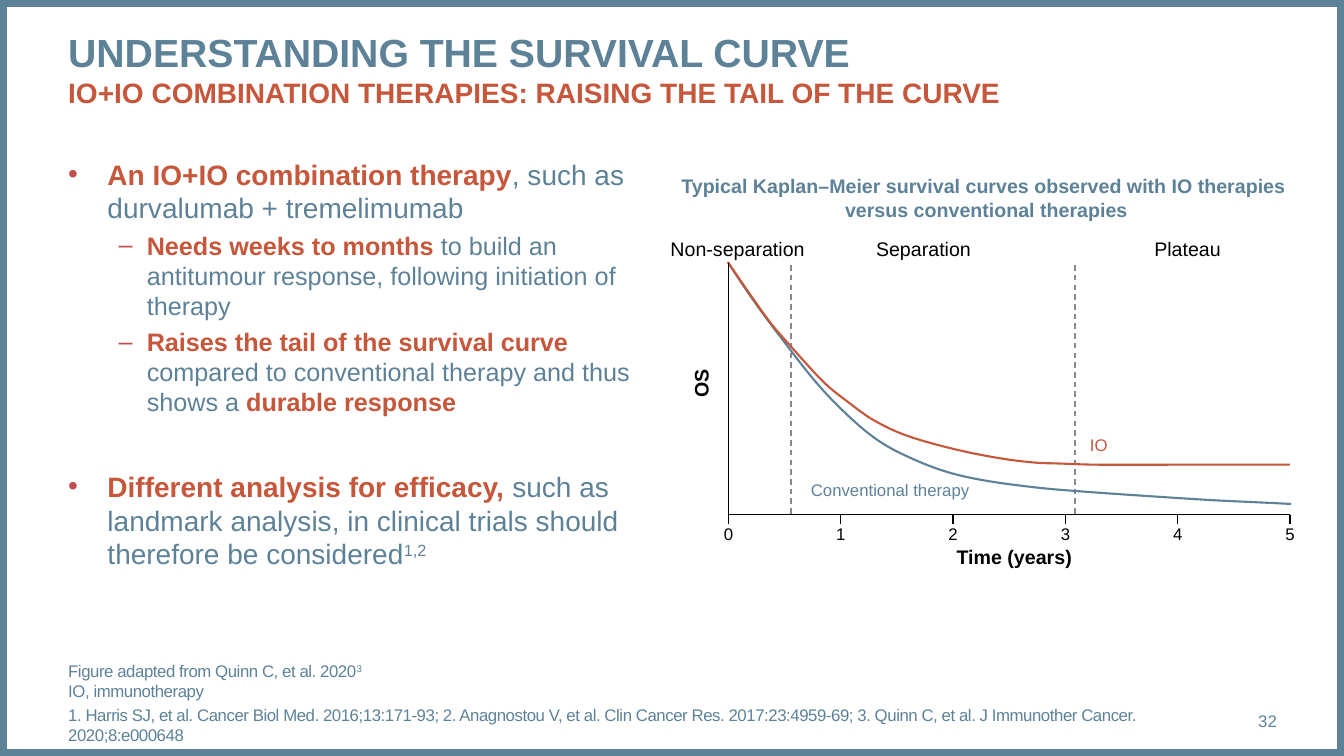
from lxml import etree
from pptx import Presentation
from pptx.dml.color import RGBColor
from pptx.enum.dml import MSO_LINE
from pptx.enum.shapes import MSO_CONNECTOR, MSO_SHAPE
from pptx.enum.text import MSO_ANCHOR, PP_ALIGN
from pptx.oxml.ns import qn
from pptx.util import Cm, Pt

LEFT, CENTER, RIGHT = PP_ALIGN.LEFT, PP_ALIGN.CENTER, PP_ALIGN.RIGHT
TOP, MIDDLE, BOTTOM = MSO_ANCHOR.TOP, MSO_ANCHOR.MIDDLE, MSO_ANCHOR.BOTTOM
STRAIGHT, RECTANGLE, DASH = MSO_CONNECTOR.STRAIGHT, MSO_SHAPE.RECTANGLE, MSO_LINE.DASH

FONT = "Arial"
COLORS = {"blue": "5D8298", "orange": "C6573B", "bullet": "C0504D",
          "black": "000000", "gray": "8B878B"}

# A span is (text, format); a paragraph is (spans, format). Lengths are in cm.
STRONG = {"color": "orange", "bold": True}
RAISED = {"raised": True}
TITLE = [([
    ("UNDERSTANDING THE SURVIVAL CURVE", {"size": 28, "bold": True}),
    ("\n", {}),
    ("IO+IO COMBINATION THERAPIES: RAISING THE TAIL OF THE CURVE", STRONG),
], {})]

MAIN = {"size": 20, "bullet": "•", "margin": 0.99, "hang": 0.99}
SUB = {"size": 18, "bullet": "–", "margin": 1.98, "hang": 0.71, "before": 4}
BODY = [
    ([("An IO+IO combination therapy", STRONG),
      (", such as durvalumab + tremelimumab", {})], MAIN),
    ([("Needs weeks to months", STRONG),
      (" to build an antitumour response, following initiation of therapy", {})], SUB),
    ([("Raises the tail of the survival curve ", STRONG),
      ("compared to conventional therapy and thus shows a ", {}),
      ("durable response", STRONG)], SUB),
    ([("Different analysis for efficacy,", STRONG),
      (" such as landmark analysis, in clinical trials should therefore be considered", {}),
      ("1,2", RAISED)], {**MAIN, "before": 37.5}),
]

NOTES = [
    ([("Figure adapted from Quinn C, et al. 2020", {}), ("3", RAISED), ("\n", {}),
      ("IO, immunotherapy", {})], {}),
    ([("1. Harris SJ, et al. Cancer Biol Med.\u00a02016;13:171-93; 2. Anagnostou V, et al. "
       "Clin Cancer Res. 2017:23:4959-69; 3. Quinn C, et al. J Immunother Cancer. "
       "2020;8:e000648", {})], {"before": 3}),
]

CHART_TITLE = ["Typical Kaplan–Meier survival curves observed with IO therapies ",
               "versus conventional therapies"]

# text, (left, top, width, height), format
CHART_LABELS = [
    ("Non-separation", (16.89, 5.97, 3.4, 0.61), {"size": 14}),
    ("Separation", (22.07, 5.97, 2.41, 0.61), {"size": 14}),
    ("Plateau", (29.09, 5.97, 1.68, 0.61), {"size": 14}),
    ("IO", (27.46, 10.95, 0.46, 0.51), {"size": 12, "color": "orange"}),
    ("Conventional therapy", (20.43, 12.09, 4.01, 0.51), {"size": 12, "color": "blue"}),
    ("OS", (17.22, 9.35, 0.9, 0.61), {"size": 14, "bold": True, "rotation": 270}),
    ("Time (years)", (24.1, 13.72, 2.92, 0.61), {"size": 14, "bold": True}),
]

AXIS_X, AXIS_TOP, AXIS_Y = 18.36, 6.63, 12.97
YEAR_WIDTH, YEARS = 2.83, 5
PHASE_LIMITS = [19.93, 27.09]

CURVES = {
    "blue": [(18.36, 6.63), (18.64, 7.06), (19.13, 7.77), (19.76, 8.61), (20.52, 9.58),
             (21.18, 10.29), (21.95, 10.97), (22.61, 11.38), (23.7, 11.84),
             (24.71, 12.09), (26.16, 12.29), (27.46, 12.4), (28.91, 12.5),
             (30.48, 12.6), (31.93, 12.67), (32.54, 12.7)],
    "orange": [(18.34, 6.6), (18.87, 7.37), (19.43, 8.15), (19.94, 8.74), (20.78, 9.65),
               (21.41, 10.16), (22.02, 10.59), (22.83, 10.97), (24.1, 11.33),
               (25.27, 11.56), (26.11, 11.66), (26.67, 11.68), (27.61, 11.71),
               (29.87, 11.71), (32.51, 11.71)],
}


def rgb(name):
    return RGBColor.from_string(COLORS[name])


def add_bullet(para, char, margin, hang):
    props = para._p.get_or_add_pPr()
    props.set("marL", str(Cm(margin)))
    props.set("indent", str(-Cm(hang)))
    color = etree.SubElement(props, qn("a:buClr"))
    etree.SubElement(color, qn("a:srgbClr"), val=COLORS["bullet"])
    etree.SubElement(props, qn("a:buFont"), typeface=FONT)
    etree.SubElement(props, qn("a:buChar"), char=char)


def add_span(para, text, size=12, color="blue", bold=False, raised=False, spacing=0):
    if text == "\n":
        para.add_line_break()
        return
    span = para.add_run()
    span.text = text
    font = span.font
    font.name, font.size, font.bold = FONT, Pt(size), bold
    font.color.rgb = rgb(color)
    props = font._element
    if raised:
        props.set("baseline", "30000")
    if spacing:
        props.set("spc", str(round(spacing * 100)))


def add_text(page, paragraphs, area, align=LEFT, anchor=TOP, wrap=True, rotation=0, **style):
    """Add a text box; style is the span format unless a paragraph or span overrides it."""
    box = page.shapes.add_textbox(*map(Cm, area))
    box.rotation = rotation
    frame = box.text_frame
    frame.word_wrap, frame.vertical_anchor = wrap, anchor
    frame.margin_left = frame.margin_right = frame.margin_top = frame.margin_bottom = 0
    for index, (spans, layout) in enumerate(paragraphs):
        para = frame.add_paragraph() if index else frame.paragraphs[0]
        para.alignment = align
        para.space_before = Pt(layout.get("before", 0))
        if "bullet" in layout:
            add_bullet(para, layout["bullet"], layout["margin"], layout["hang"])
        base = {**style, "size": layout.get("size", style.get("size", 12))}
        for text, override in spans:
            add_span(para, text, **{**base, **override})


def add_line(page, start, end, color="black", dash=None):
    line = page.shapes.add_connector(STRAIGHT, *map(Cm, start + end))
    line.line.color.rgb = rgb(color)
    line.line.width = Pt(1)
    line.line.dash_style = dash
    etree.SubElement(line._element.spPr, qn("a:effectLst"))


def bend_segments(curve):
    """Turn the straight segments of a freeform into cubic curves with smooth joints."""
    points = list(curve._element.iter(qn("a:pt")))
    knots = [(int(point.get("x")), int(point.get("y"))) for point in points]
    slopes = []
    for index in range(len(knots)):
        x0, y0 = knots[max(index - 1, 0)]
        x1, y1 = knots[min(index + 1, len(knots) - 1)]
        slopes.append((y1 - y0) / (x1 - x0))
    for index, point in enumerate(points[1:]):
        (x0, y0), (x1, y1) = knots[index:index + 2]
        third = (x1 - x0) / 3
        controls = [(x0 + third, y0 + third * slopes[index]),
                    (x1 - third, y1 - third * slopes[index + 1])]
        segment = point.getparent()
        bezier = etree.Element(qn("a:cubicBezTo"))
        for x, y in controls + [(x1, y1)]:
            etree.SubElement(bezier, qn("a:pt"), x=str(round(x)), y=str(round(y)))
        segment.getparent().replace(segment, bezier)


def add_curve(page, knots, color):
    points = [(Cm(x), Cm(y)) for x, y in knots]
    builder = page.shapes.build_freeform(*points[0])
    builder.add_line_segments(points[1:], close=False)
    curve = builder.convert_to_shape()
    bend_segments(curve)
    curve.shadow.inherit = False
    curve.fill.background()
    curve.line.color.rgb = rgb(color)
    curve.line.width = Pt(1.5)


def add_survival_chart(page):
    add_text(page, [([(line, {})], {}) for line in CHART_TITLE], (17.15, 4.39, 15.42, 1.19),
             align=CENTER, wrap=False, size=14, bold=True)
    for text, area, style in CHART_LABELS:
        add_text(page, [([(text, {})], {})], area, align=CENTER, wrap=False,
                 **{"color": "black", **style})
    add_line(page, (AXIS_X, AXIS_Y), (AXIS_X + YEARS * YEAR_WIDTH, AXIS_Y))
    for year in range(YEARS + 1):
        x = AXIS_X + year * YEAR_WIDTH
        add_line(page, (x, AXIS_Y), (x, AXIS_Y + 0.23))
        add_text(page, [([(str(year), {})], {})], (x - 0.12, 13.21, 0.24, 0.51),
                 align=CENTER, wrap=False, color="black")
    for x in PHASE_LIMITS:
        add_line(page, (x, 6.68), (x, AXIS_Y), "gray", DASH)
    for color, knots in CURVES.items():
        add_curve(page, knots, color)
    add_line(page, (AXIS_X, AXIS_TOP), (AXIS_X, AXIS_Y))


def main():
    deck = Presentation()
    deck.slide_width, deck.slide_height = Cm(33.87), Cm(19.05)
    page = deck.slides.add_slide(deck.slide_layouts[6])

    border = page.shapes.add_shape(RECTANGLE, 0, 0, deck.slide_width, deck.slide_height)
    border.shadow.inherit = False
    border.fill.background()
    border.line.color.rgb = rgb("blue")
    border.line.width = Pt(10)

    add_text(page, TITLE, (1.72, 0.71, 30.45, 2.39), size=20)
    add_text(page, BODY, (1.72, 3.96, 14.2, 12.57))
    add_text(page, [([("32", {})], {})], (29.21, 17.65, 2.97, 1.02), align=RIGHT, anchor=MIDDLE)
    add_survival_chart(page)
    add_text(page, NOTES, (1.72, 16.67, 28.27, 2.11), anchor=BOTTOM, spacing=-0.3)
    deck.save("out.pptx")


if __name__ == "__main__":
    main()
